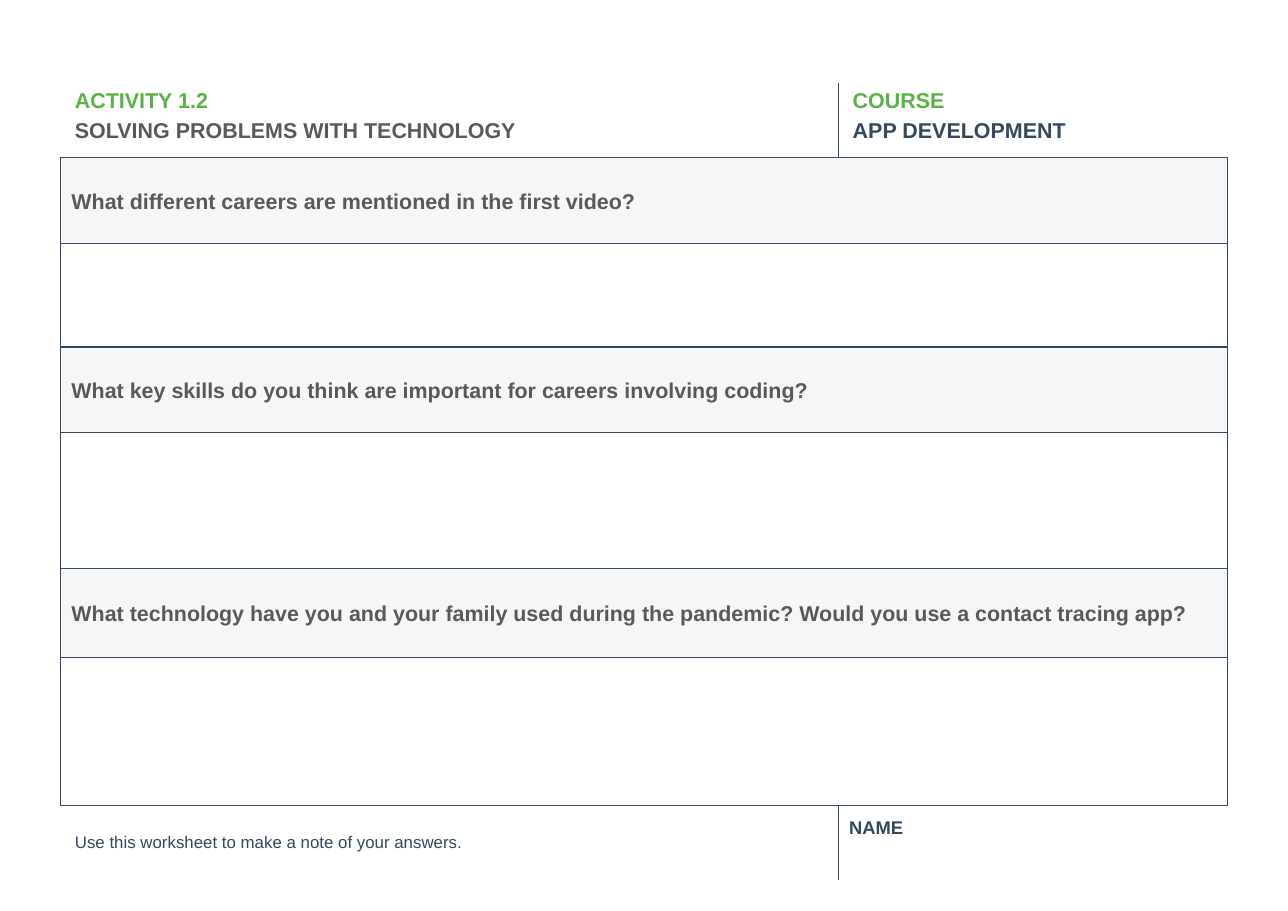
from dataclasses import dataclass
from itertools import accumulate

from lxml.etree import SubElement
from pptx import Presentation
from pptx.dml.color import RGBColor
from pptx.enum.shapes import MSO_CONNECTOR as Link, MSO_SHAPE as Form
from pptx.enum.text import MSO_ANCHOR as Anchor, PP_ALIGN as Align
from pptx.oxml.ns import qn
from pptx.util import Inches, Pt

NAVY = RGBColor(0x34, 0x49, 0x5E)
GREEN = RGBColor(0x59, 0xB2, 0x46)
GREY = RGBColor(0x59, 0x59, 0x59)
PALE = RGBColor(0xF5, 0xF6, 0xF7)

# Grid: three equal columns; the left block spans two of them
LEFT, TOP = 0.55, 1.43
COL = 3.53
SPLIT, RIGHT = LEFT + 2 * COL, LEFT + 3 * COL
HEAD = 0.81  # height of the header and footer texts
TICK = 0.68  # length of the upright dividers


@dataclass
class Line:
    text: str
    color: RGBColor
    size: float = 14
    bold: bool = True


@dataclass
class Label:
    col: int
    span: int
    top: float
    lines: list[Line]
    anchor: Anchor = Anchor.MIDDLE
    inset: float = 0.13
    lead: float = 1.15


@dataclass
class Row:
    height: float
    ask: str = ""


ROWS = [
    Row(0.78, "What different careers are mentioned in the first video?"),
    Row(0.94),
    Row(0.78, "What key skills do you think are important for careers involving coding?"),
    Row(1.23),
    Row(0.81, "What technology have you and your family used during the pandemic? "
              "Would you use a contact tracing app?"),
    Row(1.34),
]
TOPS = list(accumulate((row.height for row in ROWS), initial=TOP))
BASE = TOPS[-1]

LABELS = [
    Label(0, 2, TOP - HEAD, [Line("ACTIVITY 1.2", GREEN),
                             Line("SOLVING PROBLEMS WITH TECHNOLOGY", GREY)]),
    Label(2, 1, TOP - HEAD, [Line("COURSE", GREEN), Line("APP DEVELOPMENT", NAVY)]),
    Label(0, 2, BASE - 0.09,
          [Line("Use this worksheet to make a note of your answers.", NAVY, 11, False)]),
    Label(2, 1, BASE, [Line("NAME", NAVY, 12)], Anchor.TOP, 0.1, 1.0),
]

RULES = [
    (LEFT, TOP, RIGHT, TOP),
    (LEFT, BASE, RIGHT, BASE),
    (SPLIT, TOP - TICK, SPLIT, TOP),
    (SPLIT, BASE, SPLIT, BASE + TICK),
]


def write(shape, lines: list[Line], anchor: Anchor, inset: float, lead: float) -> None:
    frame = shape.text_frame
    look = {"word_wrap": True, "vertical_anchor": anchor}
    look |= {f"margin_{side}": Inches(inset) for side in ("left", "top", "right", "bottom")}
    for key, value in look.items():
        setattr(frame, key, value)
    for i, line in enumerate(lines):
        para = frame.add_paragraph() if i else frame.paragraphs[0]
        para.alignment, para.line_spacing = Align.LEFT, lead
        run = para.add_run()
        run.text = line.text
        font = {"name": "Arial", "size": Pt(line.size), "bold": line.bold}
        for key, value in font.items():
            setattr(run.font, key, value)
        run.font.color.rgb = line.color


def stroke(line) -> None:
    line.color.rgb = NAVY
    line.width = Pt(0.75)


def rule(slide, ends: tuple[float, ...]) -> None:
    link = slide.shapes.add_connector(Link.STRAIGHT, *map(Inches, ends))
    stroke(link.line)
    SubElement(link._element.spPr, qn("a:effectLst"))


def label(slide, item: Label) -> None:
    spot = (LEFT + item.col * COL, item.top, item.span * COL, HEAD)
    box = slide.shapes.add_textbox(*map(Inches, spot))
    write(box, item.lines, item.anchor, item.inset, item.lead)


def band(slide, row: Row, top: float) -> None:
    spot = (LEFT, top, 3 * COL, row.height)
    box = slide.shapes.add_shape(Form.RECTANGLE, *map(Inches, spot))
    box.shadow.inherit = False
    stroke(box.line)
    if row.ask:
        box.fill.solid()
        box.fill.fore_color.rgb = PALE
        write(box, [Line(row.ask, GREY)], Anchor.MIDDLE, 0.1, 1.0)
    else:
        box.fill.background()


def main() -> None:
    deck = Presentation()
    deck.slide_width, deck.slide_height = Inches(11.69), Inches(8.27)
    slide = deck.slides.add_slide(deck.slide_layouts[6])

    # Frame lines and dividers
    for ends in RULES:
        rule(slide, ends)

    # Questions and answer spaces
    for row, top in zip(ROWS, TOPS):
        band(slide, row, top)

    # Header and footer
    for item in LABELS:
        label(slide, item)

    deck.save("out.pptx")


if __name__ == "__main__":
    main()
